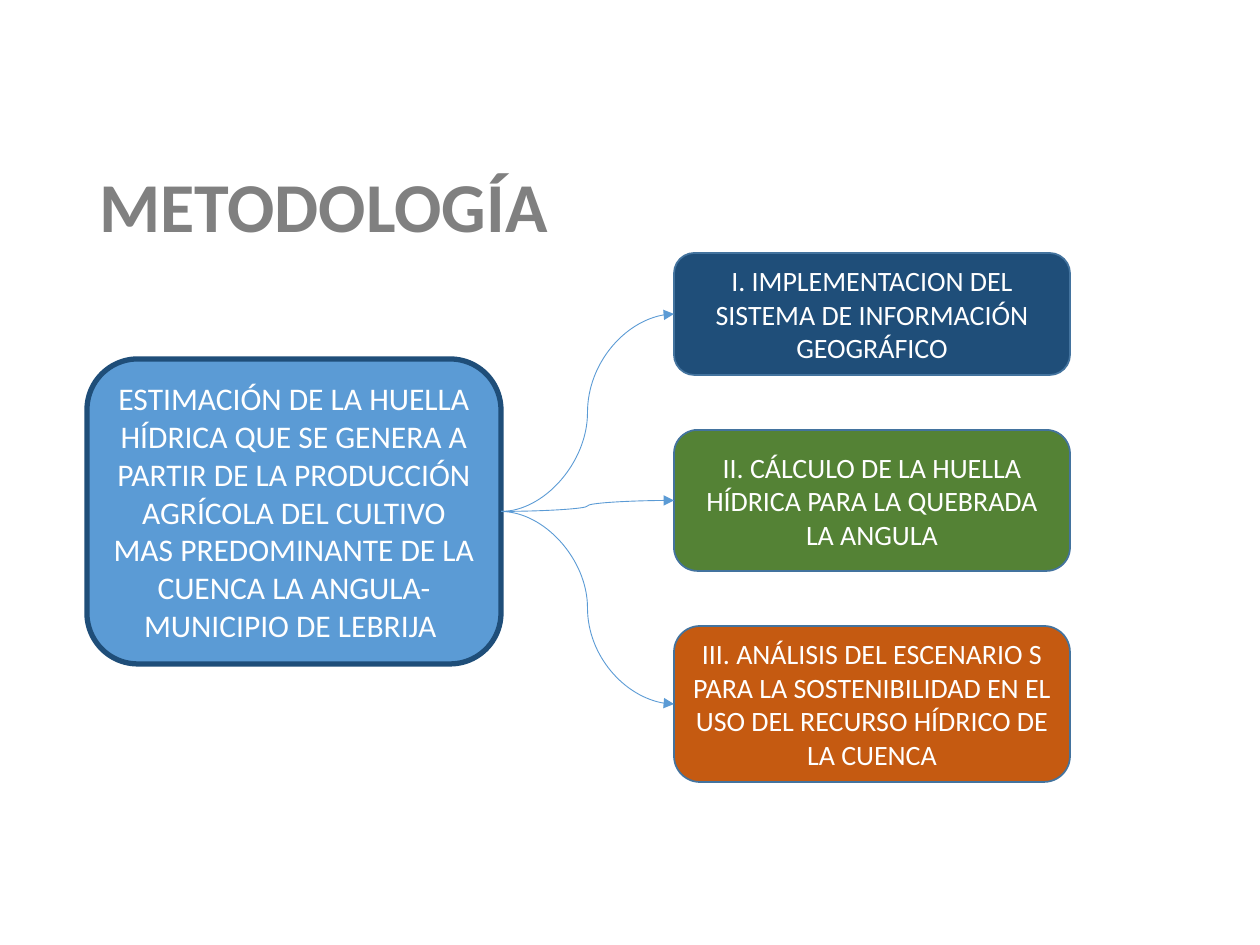
from lxml import etree
from pptx import Presentation
from pptx import util as u
from pptx.dml import color
from pptx.enum import shapes, text
from pptx.oxml import ns

EMU_PER_PX = 914400 / 126
FONT = "Calibri"
GOAL = ("ESTIMACIÓN DE LA HUELLA HÍDRICA QUE SE GENERA A PARTIR DE LA PRODUCCIÓN "
        "AGRÍCOLA DEL CULTIVO MAS PREDOMINANTE DE LA CUENCA LA ANGULA- "
        "MUNICIPIO DE LEBRIJA ")
PHASES = [
    ("I. IMPLEMENTACION DEL SISTEMA DE INFORMACIÓN GEOGRÁFICO", "1F4E79", 122),
    ("II. CÁLCULO DE LA HUELLA HÍDRICA PARA LA QUEBRADA LA ANGULA", "548235", 141),
    ("III. ANÁLISIS DEL ESCENARIO S PARA LA SOSTENIBILIDAD EN EL USO DEL "
     "RECURSO HÍDRICO DE LA CUENCA", "C55A11", 156),
]
PHASE_LEFT, PHASE_TOP, PHASE_WIDTH, PHASE_GAP = 674, 253, 396, 55


def px(length):
    """Turn pixels into EMU."""
    return u.Emu(round(length * EMU_PER_PX))


def paint(target, hex_color):
    """Give a fill or line fill a solid colour."""
    target.solid()
    target.fore_color.rgb = color.RGBColor.from_string(hex_color)


def apply(target, values):
    """Set each attribute named in a dict of format values."""
    for name, value in values.items():
        setattr(target, name, value)


def write(shape, words, align, font, frame_format):
    """Put one formatted paragraph into a shape and return it."""
    frame = shape.text_frame
    apply(frame, {"word_wrap": True, "auto_size": text.MSO_AUTO_SIZE.NONE,
                  "vertical_anchor": text.MSO_ANCHOR.MIDDLE, **frame_format})
    para = frame.paragraphs[0]
    para.alignment = align
    span = para.add_run()
    span.text = words
    hex_color = font.pop("color")
    apply(span.font, {"name": FONT, **font})
    paint(span.font.fill, hex_color)
    return para


def add_title(page, words):
    """Fill and place the title placeholder."""
    title = page.shapes.title
    apply(title, {"left": px(87), "top": px(139), "width": px(1086), "height": px(142)})
    para = write(title, words, text.PP_ALIGN.LEFT,
                 {"size": u.Pt(40), "bold": True, "color": "808080"}, {})
    para.line_spacing = 0.9


def add_box(page, words, bounds, fill, line, line_width, size):
    """Add a rounded box with centred white text."""
    box = page.shapes.add_shape(shapes.MSO_SHAPE.ROUNDED_RECTANGLE, *map(px, bounds))
    box.shadow.inherit = False
    paint(box.fill, fill)
    paint(box.line.fill, line)
    box.line.width = u.Pt(line_width)
    write(box, words, text.PP_ALIGN.CENTER, {"size": u.Pt(size), "color": "FFFFFF"},
          {"margin_left": px(9), "margin_right": px(9),
           "margin_top": px(5), "margin_bottom": px(5)})
    return box


def add_arrow(page, source, target):
    """Join the right side of one box to the left side of another."""
    arrow = page.shapes.add_connector(shapes.MSO_CONNECTOR.CURVE, 0, 0, 0, 0)
    arrow.begin_connect(source, 3)
    arrow.end_connect(target, 1)
    paint(arrow.line.fill, "5B9BD5")
    arrow.line.width = u.Pt(0.5)
    properties = arrow.element.spPr
    etree.SubElement(properties.find(ns.qn("a:ln")), ns.qn("a:tailEnd"), type="triangle")
    etree.SubElement(properties, ns.qn("a:effectLst"))


def main():
    """Build the methodology slide."""
    deck = Presentation()
    apply(deck, {"slide_width": px(1260), "slide_height": px(945)})
    page = deck.slides.add_slide(deck.slide_layouts[5])
    add_title(page, "METODOLOGÍA")
    goal = add_box(page, GOAL, (87, 359, 414, 305), "5B9BD5", "1F4E79", 3, 18)
    top = PHASE_TOP
    for words, fill, height in PHASES:
        phase = add_box(page, words, (PHASE_LEFT, top, PHASE_WIDTH, height),
                        fill, "43739E", 1, 16)
        add_arrow(page, goal, phase)
        top += height + PHASE_GAP
    deck.save("out.pptx")


if __name__ == "__main__":
    main()
